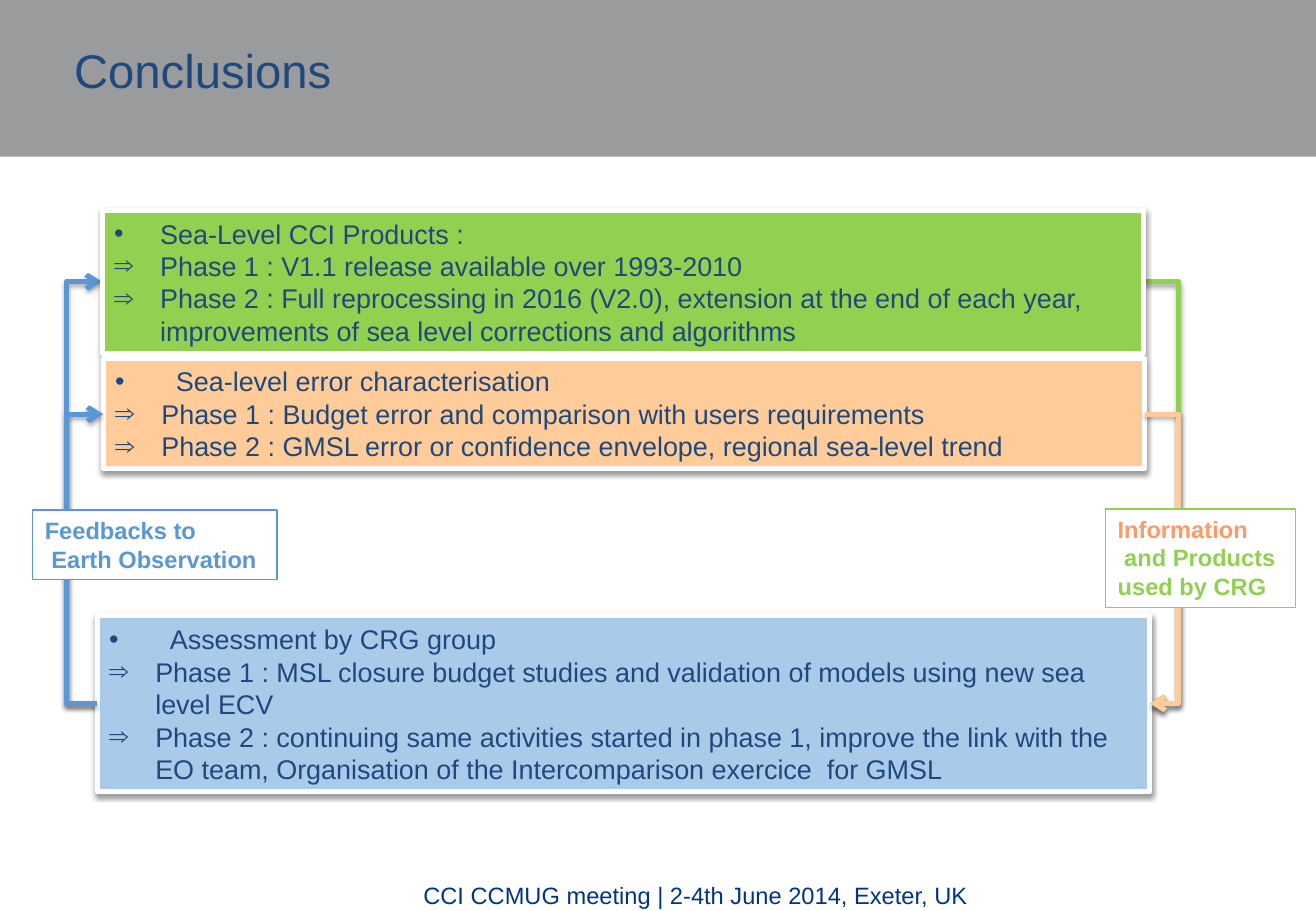
import pptx
import pptx.util
from lxml import etree
from pptx.dml.color import RGBColor
from pptx.enum.shapes import MSO_CONNECTOR, MSO_SHAPE
from pptx.enum.text import MSO_ANCHOR, MSO_AUTO_SIZE, PP_ALIGN
from pptx.oxml import parse_xml
from pptx.oxml.ns import nsdecls, qn

EMU_PER_PX = 9144  # 100 px to the inch
FONT = "Arial"
NAVY, BLUE, GREEN, PEACH = "1F497D", "5997D6", "92D050", "FFCC99"
LEFT_BEND, RIGHT_BEND = 55, 970
PRODUCTS_Y, ERRORS_Y, ASSESSMENT_Y = 232, 341, 579


def px(length):
    return pptx.util.Emu(length * EMU_PER_PX)


def rgb(hex_color):
    return RGBColor.from_string(hex_color)


def format_text(paragraph, size, color, bold=False):
    for run in paragraph.runs:
        run.font.name = FONT
        run.font.size = pptx.util.Pt(size)
        run.font.bold = bold
        run.font.color.rgb = rgb(color)


def add_shadow(item, opacity, distance):
    """Give a shape or connector a soft shadow below it."""
    properties = item._element.spPr
    for effects in properties.findall(qn("a:effectLst")):
        properties.remove(effects)
    properties.append(parse_xml(
        f'<a:effectLst {nsdecls("a")}><a:outerShdw blurRad="{int(3.1 * 12700)}" '
        f'dist="{int(distance * 12700)}" dir="5400000" rotWithShape="0">'
        f'<a:srgbClr val="000000"><a:alpha val="{opacity * 1000}"/></a:srgbClr>'
        '</a:outerShdw></a:effectLst>'))


def add_bullet(paragraph, mark, indent):
    properties = paragraph._p.get_or_add_pPr()
    properties.set("marL", str(px(indent)))
    properties.set("indent", str(-px(indent)))
    etree.SubElement(properties, qn("a:buFont"), typeface=FONT)
    etree.SubElement(properties, qn("a:buChar"), char=mark)


def add_rectangle(slide, box, fill, line=None, width=0.75):
    rectangle = slide.shapes.add_shape(MSO_SHAPE.RECTANGLE, *map(px, box))
    rectangle.shadow.inherit = False
    rectangle.fill.solid()
    rectangle.fill.fore_color.rgb = rgb(fill)
    if line:
        rectangle.line.color.rgb = rgb(line)
        rectangle.line.width = pptx.util.Pt(width)
    else:
        rectangle.line.fill.background()
    return rectangle


def add_header(slide, box, heading):
    left, top, width, height = box
    band = add_rectangle(slide, box, "9A9B9C")
    slide.shapes._spTree.insert(2, band._element)
    title = slide.shapes.title
    title.left, title.top = px(left + 51), px(top + 34)
    title.width, title.height = px(235), px(53)
    frame = title.text_frame
    frame.text = heading
    frame.word_wrap = False
    frame.auto_size = MSO_AUTO_SIZE.NONE
    frame.vertical_anchor = MSO_ANCHOR.TOP
    paragraph = frame.paragraphs[0]
    paragraph.alignment = PP_ALIGN.LEFT
    paragraph.line_spacing = 0.9
    format_text(paragraph, 28, NAVY)


def add_footer(slide, box, wording):
    frame = slide.shapes.add_textbox(*map(px, box)).text_frame
    frame.word_wrap = True
    frame.text = wording
    frame.paragraphs[0].alignment = PP_ALIGN.CENTER
    format_text(frame.paragraphs[0], 14, "00338D")


def add_topic(slide, box, fill, heading, phases, heading_indent=50):
    """Add a coloured panel with a bulleted heading and its phases."""
    panel = add_rectangle(slide, box, fill, "FFFFFF", 3)
    add_shadow(panel, 38, 1.6)
    frame = panel.text_frame
    frame.word_wrap = True
    frame.vertical_anchor = MSO_ANCHOR.MIDDLE
    frame.text = "\n".join([heading, *phases])
    for index, paragraph in enumerate(frame.paragraphs):
        paragraph.alignment = PP_ALIGN.LEFT
        if index == 0:
            add_bullet(paragraph, "•", heading_indent)
        else:
            add_bullet(paragraph, "⇒", 38)
        format_text(paragraph, 16, NAVY)


def add_label(slide, box, border, lines):
    """Add a bordered label from (wording, colour) lines."""
    frame = add_rectangle(slide, box, "FFFFFF", border).text_frame
    frame.word_wrap = False
    frame.vertical_anchor = MSO_ANCHOR.TOP
    frame.text = "\n".join(wording for wording, _ in lines)
    for paragraph, (_, color) in zip(frame.paragraphs, lines):
        paragraph.alignment = PP_ALIGN.LEFT
        format_text(paragraph, 14, color, bold=True)


def add_loop(slide, start, end, bend, color):
    """Add an arrow that runs out to the x position bend and back."""
    loop = slide.shapes.add_connector(
        MSO_CONNECTOR.ELBOW, *map(px, (*start, *end)))
    loop.line.color.rgb = rgb(color)
    loop.line.width = pptx.util.Pt(3)
    etree.SubElement(loop.line._get_or_add_ln(), qn("a:tailEnd"), type="arrow")
    share = round((bend - start[0]) / (end[0] - start[0]) * 100000)
    guides = loop._element.spPr.find(qn("a:prstGeom")).get_or_add_avLst()
    etree.SubElement(guides, qn("a:gd"), name="adj1", fmla=f"val {share}")
    add_shadow(loop, 35, 1.8)


def main():
    deck = pptx.Presentation()
    deck.slide_width, deck.slide_height = px(1083), px(750)
    slide = deck.slides.add_slide(deck.slide_layouts[5])

    add_header(slide, (0, 0, 1083, 129), "Conclusions")
    add_footer(slide, (207, 720, 731, 30),
               "CCI CCMUG meeting | 2-4th June 2014, Exeter, UK")

    add_loop(slide, (80, ASSESSMENT_Y), (84, PRODUCTS_Y), LEFT_BEND, BLUE)
    add_loop(slide, (942, PRODUCTS_Y), (946, ASSESSMENT_Y), RIGHT_BEND, GREEN)
    add_topic(slide, (84, 173, 857, 118), GREEN, "Sea-Level CCI Products :", [
        "Phase 1 : V1.1 release available over 1993-2010",
        "Phase 2 : Full reprocessing in 2016 (V2.0), extension at the end of "
        "each year, improvements of sea level corrections and algorithms",
    ], heading_indent=38)
    add_topic(slide, (85, 295, 857, 91), PEACH,
              "Sea-level error characterisation", [
        "Phase 1 : Budget error and comparison with users requirements",
        "Phase 2 : GMSL error or confidence envelope, regional sea-level trend",
    ])
    add_topic(slide, (80, 507, 866, 145), "AACAEA", "Assessment by CRG group", [
        "Phase 1 : MSL closure budget studies and validation of models using "
        "new sea level ECV",
        "Phase 2 : continuing same activities started in phase 1, improve the "
        "link with the EO team, Organisation of the Intercomparison exercice  "
        "for GMSL",
    ])
    add_loop(slide, (942, ERRORS_Y), (946, ASSESSMENT_Y), RIGHT_BEND, PEACH)
    add_loop(slide, (80, ASSESSMENT_Y), (85, ERRORS_Y), LEFT_BEND, BLUE)

    add_label(slide, (910, 419, 156, 81), GREEN, [
        ("Information", "FF9966"), (" and Products", GREEN),
        ("used by CRG", GREEN)])
    add_label(slide, (27, 420, 201, 57), BLUE, [
        ("Feedbacks to", BLUE), (" Earth Observation", BLUE)])

    deck.save("out.pptx")


if __name__ == "__main__":
    main()
